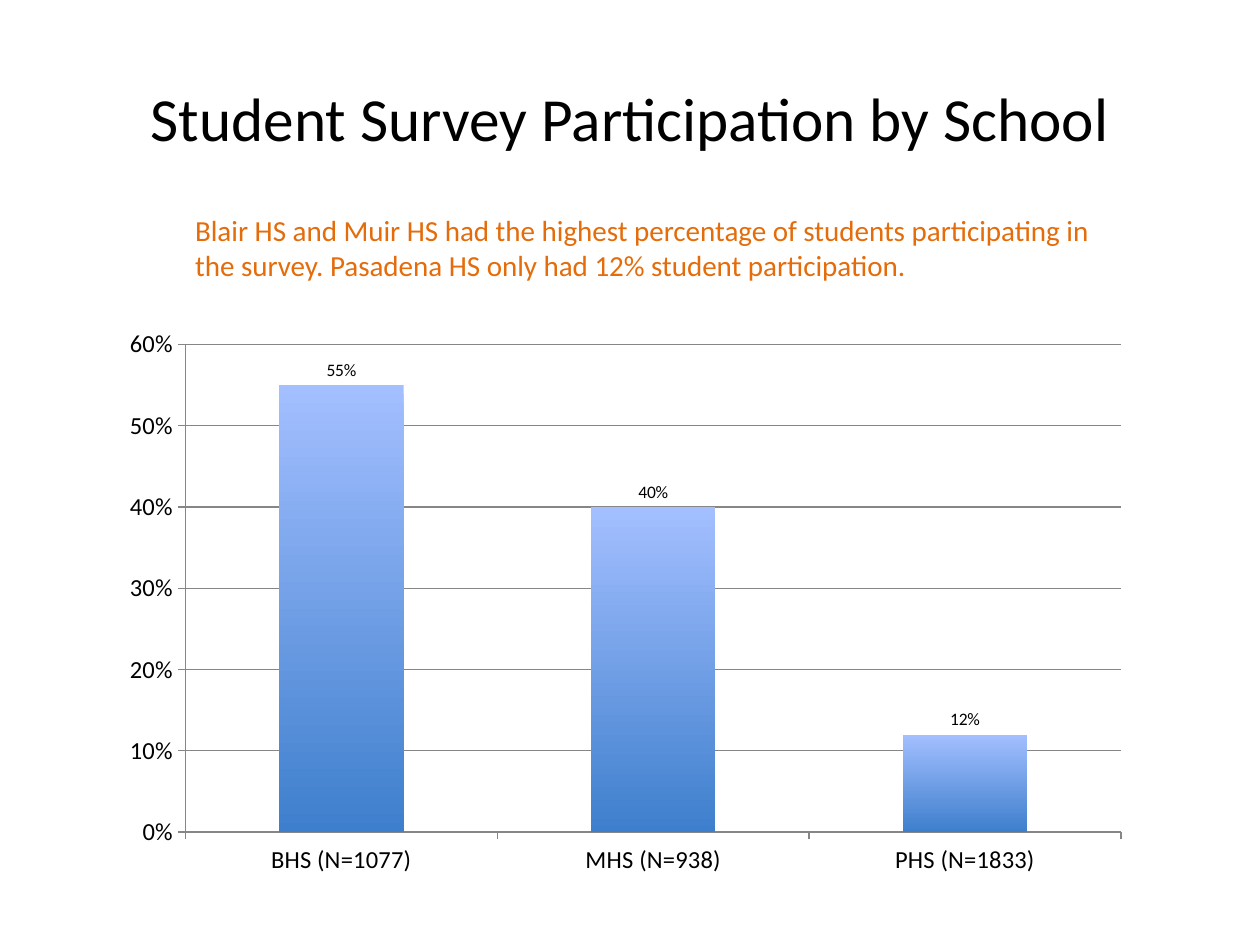
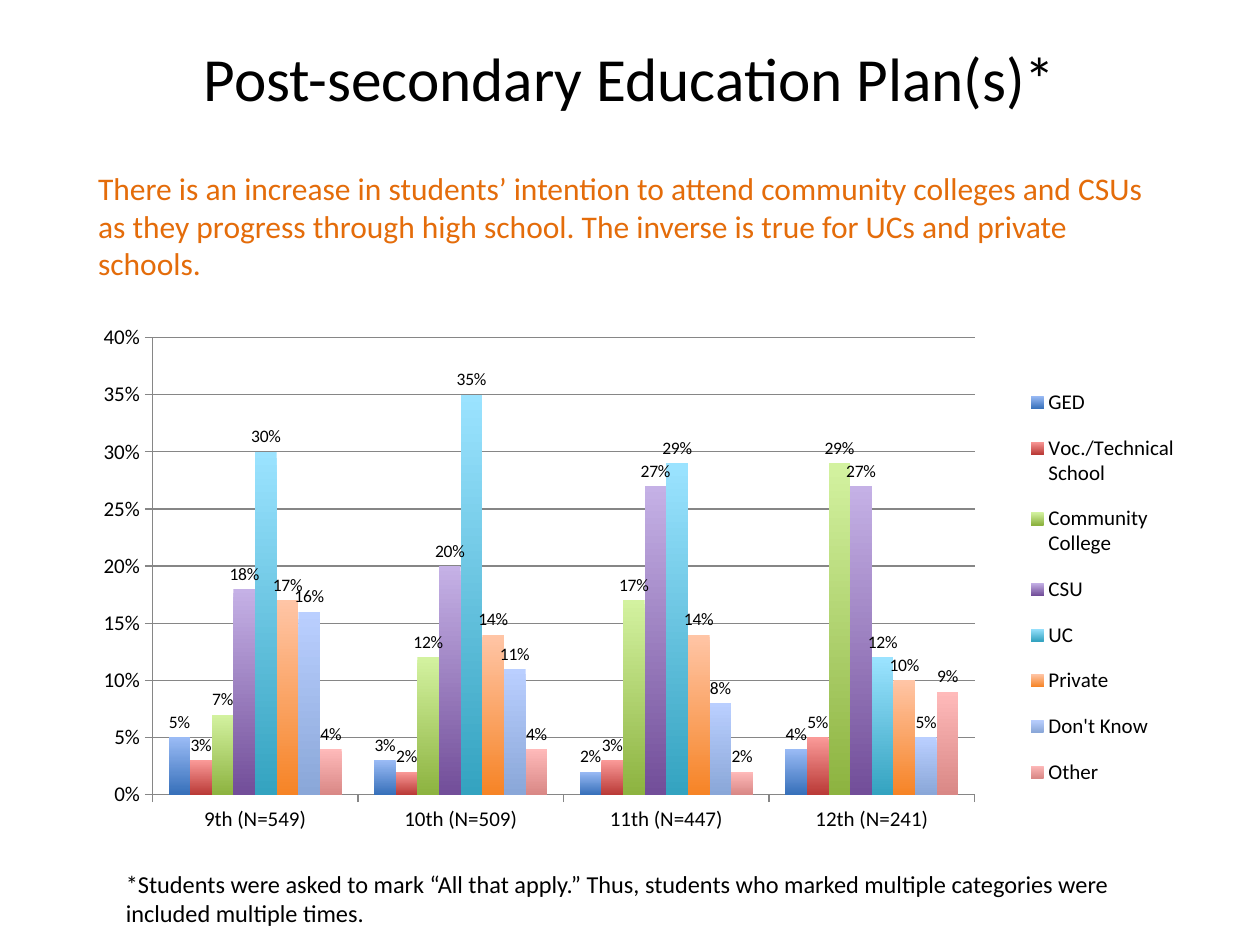
from lxml.etree import SubElement
from pptx import Presentation
from pptx.chart.data import CategoryChartData
from pptx.dml.color import RGBColor
from pptx.enum.chart import (XL_CHART_TYPE, XL_LABEL_POSITION,
                             XL_LEGEND_POSITION, XL_TICK_MARK)
from pptx.enum.text import MSO_ANCHOR, PP_ALIGN
from pptx.oxml.ns import qn
from pptx.util import Inches, Pt

FACE = "Calibri"
COLORS = {"text": "000000", "accent": "E46C0A", "axis": "868686"}

# Bar gradients: (top, bottom)
BARS = {
    "school": ("A3BFFF", "3E7FCD"),
    "GED": ("9ABBF5", "3770BA"),
    "Voc./Technical School": ("FA9A98", "BA3A37"),
    "Community College": ("D3F2A0", "8DB340"),
    "CSU": ("C5B1E6", "724E99"),
    "UC": ("9BE3FF", "34A3C0"),
    "Private": ("FFC5A6", "F68426"),
    "Don't Know": ("BACFFF", "8AA7D8"),
    "Other": ("FFBABA", "D98886"),
}

SCHOOLS = ["BHS (N=1077)", "MHS (N=938)", "PHS (N=1833)"]
GRADES = ["9th (N=549)", "10th (N=509)", "11th (N=447)", "12th (N=241)"]
PLANS = {
    "GED": (0.05, 0.03, 0.02, 0.04),
    "Voc./Technical School": (0.03, 0.02, 0.03, 0.05),
    "Community College": (0.07, 0.12, 0.17, 0.29),
    "CSU": (0.18, 0.2, 0.27, 0.27),
    "UC": (0.3, 0.35, 0.29, 0.12),
    "Private": (0.17, 0.14, 0.14, 0.1),
    "Don't Know": (0.16, 0.11, 0.08, 0.05),
    "Other": (0.04, 0.04, 0.02, 0.09),
}


def color(name):
    return RGBColor.from_string(COLORS[name])


def style(font, size, tone="text"):
    font.name = FACE
    font.size = Pt(size)
    font.color.rgb = color(tone)


def add_slide(deck, title, top, height):
    slide = deck.slides.add_slide(deck.slide_layouts[5])
    shape = slide.shapes.title
    shape.left, shape.top = Inches(0.5), Inches(top)
    shape.width, shape.height = Inches(9), Inches(height)
    frame = shape.text_frame
    frame.text = title
    frame.vertical_anchor = MSO_ANCHOR.MIDDLE
    frame.paragraphs[0].alignment = PP_ALIGN.CENTER
    style(frame.paragraphs[0].font, 35)
    return slide


def add_text(slide, text, box, size, tone="text"):
    frame = slide.shapes.add_textbox(*map(Inches, box)).text_frame
    frame.word_wrap = True
    frame.text = text
    style(frame.paragraphs[0].font, size, tone)


def place(part, box, inner=False):
    """Fix a chart part at x, y, w, h, as shares of the chart's size."""
    layout = part.find(qn("c:layout"))
    if layout is None:
        layout = part.makeelement(qn("c:layout"))
        part.insert(0 if part.find(qn("c:legendPos")) is None else 1, layout)
    manual = SubElement(layout, qn("c:manualLayout"))
    rules = [("layoutTarget", "inner")] if inner else []
    rules += [("xMode", "edge"), ("yMode", "edge")]
    rules += zip("xywh", map(str, box))
    for tag, value in rules:
        SubElement(manual, qn(f"c:{tag}")).set("val", value)


def style_axis(axis, size):
    style(axis.tick_labels.font, size)
    axis.major_tick_mark = XL_TICK_MARK.OUTSIDE
    axis.minor_tick_mark = XL_TICK_MARK.NONE
    axis.format.line.color.rgb = color("axis")
    axis.format.line.width = Pt(0.75)


def style_bars(series, tones):
    fill = series.format.fill
    fill.gradient()
    fill.gradient_angle = 270
    for stop, tone, spot in zip(fill.gradient_stops, tones, (0, 1)):
        stop.color.rgb = RGBColor.from_string(tone)
        stop.position = spot
    series.invert_if_negative = False
    labels = series.data_labels
    labels.show_value = True
    labels.number_format = "0%"
    labels.number_format_is_linked = False
    labels.position = XL_LABEL_POSITION.OUTSIDE_END
    style(labels.font, 10)


def add_bars(slide, cats, rows, tones, box, plot, size, top, step):
    data = CategoryChartData(number_format="0%")
    data.categories = cats
    for name, values in rows.items():
        data.add_series(name, values)
    chart = slide.shapes.add_chart(
        XL_CHART_TYPE.COLUMN_CLUSTERED, *map(Inches, box), data).chart
    style(chart.font, 10)
    chart.has_title = False
    chart.has_legend = False
    bars = chart.plots[0]
    bars.gap_width = 150
    bars.overlap = 0
    bars.vary_by_categories = False
    for series, pair in zip(bars.series, tones):
        style_bars(series, pair)
    style_axis(chart.category_axis, size)
    axis = chart.value_axis
    style_axis(axis, size)
    axis.minimum_scale, axis.maximum_scale = 0, top
    axis.major_unit = step
    axis.tick_labels.number_format = "0%"
    axis.tick_labels.number_format_is_linked = False
    axis.has_major_gridlines = True
    axis.major_gridlines.format.line.color.rgb = color("axis")
    axis.major_gridlines.format.line.width = Pt(0.75)
    place(chart.plots[0]._element.getparent(), plot, inner=True)
    return chart


def add_legend(chart, box):
    chart.has_legend = True
    legend = chart.legend
    legend.position = XL_LEGEND_POSITION.RIGHT
    legend.include_in_layout = False
    style(legend.font, 12)
    place(legend._element, box)


def add_schools(deck):
    slide = add_slide(deck, "Student Survey Participation by School", 0.3, 1.25)
    add_bars(slide, SCHOOLS, {"Series 1": (0.55, 0.4, 0.12)}, [BARS["school"]],
             (0.9, 2.51, 8.16, 4.5), (0.07, 0.05, 0.91, 0.86), 14, 0.6, 0.1)
    add_text(slide, "Blair HS and Muir HS had the highest percentage of "
             "students participating in the survey. Pasadena HS only had 12% "
             "student participation.", (1.45, 1.64, 7.61, 0.7), 16.6, "accent")


def add_plans(deck):
    slide = add_slide(deck, "Post-secondary Education Plan(s)*", 0.11, 1.01)
    add_text(slide, "*Students were asked to mark “All that apply.” Thus, "
             "students who marked multiple categories were included multiple "
             "times.", (0.9, 6.85, 8.22, 0.47), 13.9)
    chart = add_bars(slide, GRADES, PLANS, [BARS[name] for name in PLANS],
                     (0.68, 2.51, 8.82, 4.22), (0.06, 0.04, 0.74, 0.86),
                     12, 0.4, 0.05)
    add_legend(chart, (0.84, 0.1, 0.15, 0.82))
    add_text(slide, "There is an increase in students’ intention to attend "
             "community colleges and CSUs as they progress through high "
             "school. The inverse is true for UCs and private schools.",
             (0.68, 1.29, 8.59, 1.01), 18, "accent")


def main():
    deck = Presentation()
    deck.slide_width, deck.slide_height = Inches(10), Inches(7.5)
    add_schools(deck)
    add_plans(deck)
    deck.save("out.pptx")


if __name__ == "__main__":
    main()
